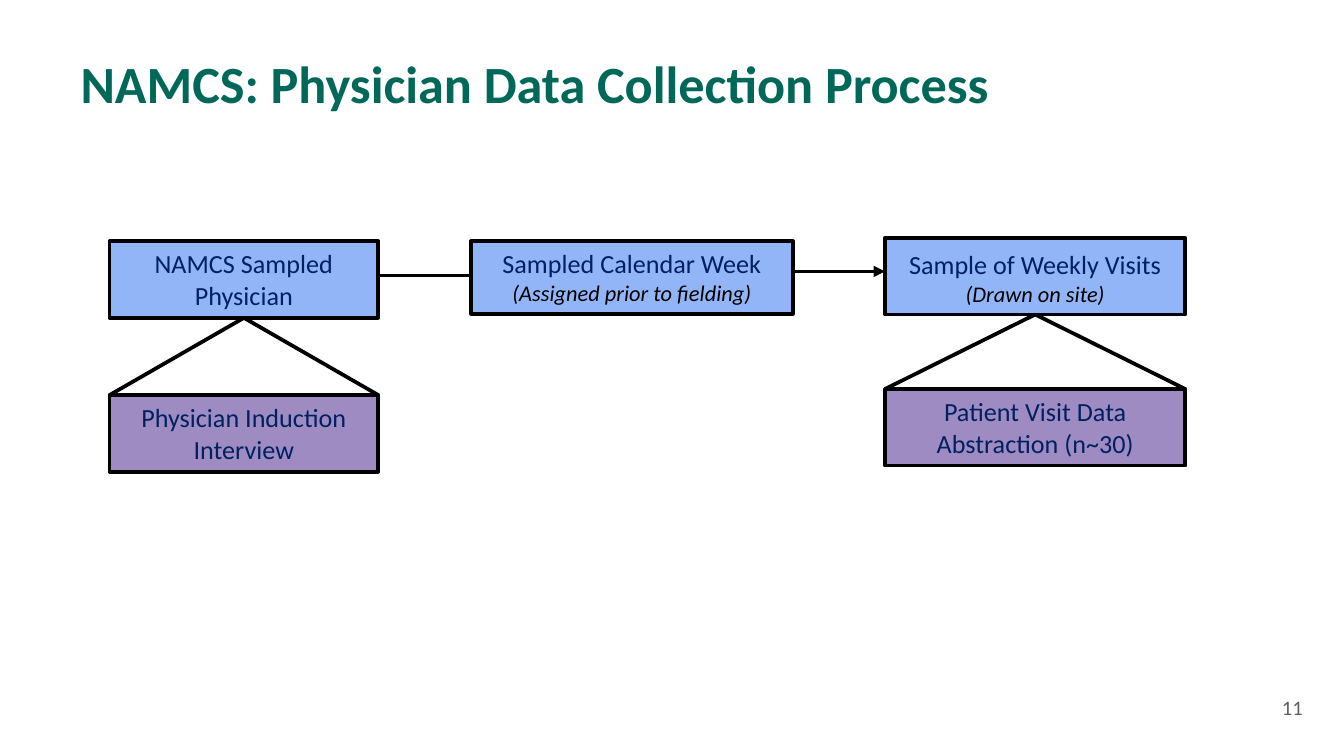
from lxml.etree import SubElement
from pptx import Presentation
from pptx.dml.color import RGBColor
from pptx.enum.shapes import MSO_CONNECTOR, MSO_SHAPE
from pptx.enum.text import MSO_ANCHOR, MSO_AUTO_SIZE, PP_ALIGN
from pptx.oxml.ns import qn
from pptx.util import Pt

PX = 4572  # 200 px to the inch
BLUE, PURPLE, NAVY, BLACK = "92B5F7", "9E8BC1", "002060", "000000"
BOTTOM = 2


def add_run(paragraph, text, size, color, **formats):
    run = paragraph.add_run()
    run.text = text
    formats = {"name": "Calibri", "size": Pt(size), **formats}
    for attribute, value in formats.items():
        setattr(run.font, attribute, value)
    run.font.color.rgb = RGBColor.from_string(color)


def add_line(start, end):
    line = slide.shapes.add_connector(
        MSO_CONNECTOR.STRAIGHT, *(v * PX for v in start + end))
    line.line.color.rgb = RGBColor.from_string(BLACK)
    line.line.width = Pt(2)
    SubElement(line._element.spPr, qn("a:effectLst"))
    return line


prs = Presentation()
prs.slide_width, prs.slide_height = 2000 * PX, 1125 * PX
slide = prs.slides.add_slide(prs.slide_layouts[5])

title = slide.shapes.title
title.left, title.top, title.width, title.height = (v * PX for v in (100, 46, 1800, 134))
title.text_frame.vertical_anchor = MSO_ANCHOR.BOTTOM
heading = title.text_frame.paragraphs[0]
heading.alignment = PP_ALIGN.LEFT
heading.line_spacing = Pt(30)
add_run(heading, "NAMCS: Physician Data Collection Process", 28, "006858", bold=True)

# left, top, width, height, fill, main text, size of the space, note
steps = {
    "physician": (163, 359, 400, 114, BLUE, "NAMCS Sampled Physician", 14, ""),
    "visits": (1317, 354, 447, 114, BLUE, "Sample of Weekly Visits", 16, "(Drawn on site)"),
    "interview": (163, 588, 400, 114, PURPLE, "Physician Induction Interview", 14, ""),
    "abstraction": (1317, 579, 447, 114, PURPLE, "Patient Visit Data Abstraction (n~30)", 14, ""),
    "week": (701, 359, 479, 108, BLUE, "Sampled Calendar Week", 14, "(Assigned prior to fielding)"),
}
boxes = {}
for step, (left, top, width, height, fill, label, space_size, note) in steps.items():
    box = slide.shapes.add_shape(
        MSO_SHAPE.RECTANGLE, left * PX, top * PX, width * PX, height * PX)
    box.shadow.inherit = False
    box.fill.solid()
    box.fill.fore_color.rgb = RGBColor.from_string(fill)
    box.line.color.rgb = RGBColor.from_string(BLACK)
    box.line.width = Pt(2)
    frame = box.text_frame
    frame.word_wrap = True
    frame.auto_size = MSO_AUTO_SIZE.SHAPE_TO_FIT_TEXT
    frame.vertical_anchor = MSO_ANCHOR.TOP
    paragraph = frame.paragraphs[0]
    paragraph.alignment = PP_ALIGN.CENTER
    add_run(paragraph, label, 14, NAVY)
    if note:
        add_run(paragraph, " ", space_size, NAVY)
        add_run(paragraph, note, 12, BLACK, italic=True)
    boxes[step] = box

to_visits = add_line((1180, 404), (1317, 404))
SubElement(to_visits.line._get_or_add_ln(), qn("a:tailEnd"), type="triangle")
add_line((563, 410), (701, 410))

# Lines fan out from each sample to the top corners of its instrument
for sample, instrument in (("physician", "interview"), ("visits", "abstraction")):
    left, top, width = steps[instrument][:3]
    for corner in (left + width, left):
        fan = add_line((left + width // 2, top), (corner, top))
        fan.begin_connect(boxes[sample], BOTTOM)

page_number = slide.shapes.add_textbox(1888 * PX, 1025 * PX, 82 * PX, 58 * PX)
page_number.text_frame.word_wrap = True
add_run(page_number.text_frame.paragraphs[0], "11", 11, "5F5F5F")

prs.save("out.pptx")
